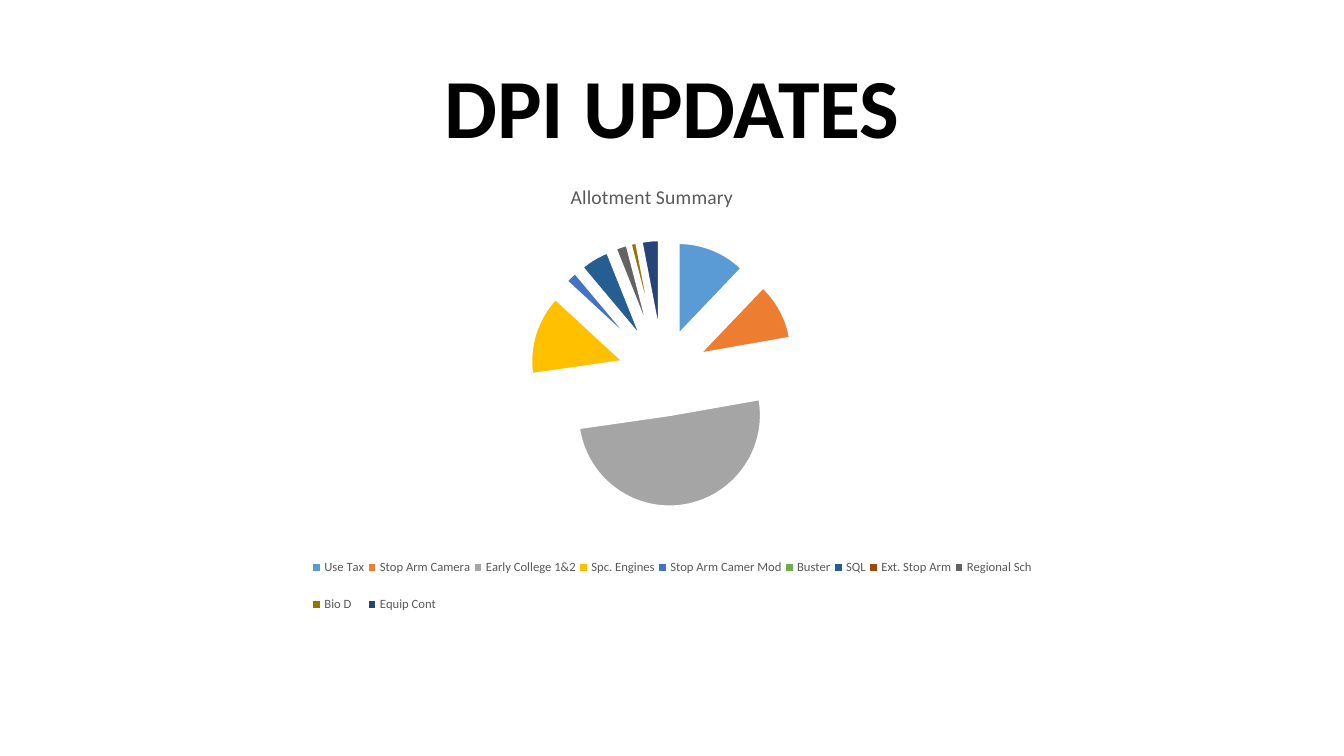
from dataclasses import dataclass

from pptx import Presentation
from pptx import util as u
from pptx.chart import data as chart_data
from pptx.dml import color
from pptx.enum import chart as ch
from pptx.enum import text
from pptx.oxml import ns, xmlchemy

EMU_PER_PX = 914400 / 100.8


@dataclass(frozen=True)
class Theme:
    font: str = "Calibri"
    ink: str = "000000"
    muted: str = "595959"
    paper: str = "FFFFFF"
    title_pt: int = 60
    chart_title_pt: int = 14
    chart_pt: int = 10
    legend_pt: int = 9
    border_pt: float = 1.5


@dataclass(frozen=True)
class Box:
    left: int
    top: int
    width: int
    height: int

    def emu(self) -> tuple[u.Emu, ...]:
        return tuple(px(v) for v in (self.left, self.top, self.width, self.height))


@dataclass(frozen=True)
class Allotment:
    name: str
    value: int
    fill: str


THEME = Theme()
TITLE_BOX = Box(168, 25, 1008, 137)
CHART_BOX = Box(194, 149, 957, 607)
EXPLOSION = 46
ALLOTMENTS = [
    Allotment("Use Tax", 12, "5B9BD5"),
    Allotment("Stop Arm Camera", 10, "ED7D31"),
    Allotment("Early College 1&2", 50, "A5A5A5"),
    Allotment("Spc. Engines", 14, "FFC000"),
    Allotment("Stop Arm Camer Mod", 2, "4472C4"),
    Allotment("Buster", 0, "70AD47"),
    Allotment("SQL", 5, "255E91"),
    Allotment("Ext. Stop Arm", 0, "9E480E"),
    Allotment("Regional Sch", 2, "636363"),
    Allotment("Bio D", 1, "997300"),
    Allotment("Equip Cont", 3, "264478"),
]


def px(value: int) -> u.Emu:
    return u.Emu(round(value * EMU_PER_PX))


def rgb(value: str) -> color.RGBColor:
    return color.RGBColor.from_string(value)


def style_font(font, size: float, fill: str, bold: bool = False) -> None:
    font.name = THEME.font
    font.size = u.Pt(size)
    font.bold = bold
    font.color.rgb = rgb(fill)


def chart_element(tag: str, value: object = None) -> xmlchemy.OxmlElement:
    element = xmlchemy.OxmlElement(tag)
    if value is not None:
        element.set("val", str(value))
    return element


def place(parent, index: int, **fractions: float) -> None:
    layout = parent.find(ns.qn("c:layout"))
    if layout is not None:
        parent.remove(layout)
    layout = chart_element("c:layout")
    manual = chart_element("c:manualLayout")
    layout.append(manual)
    if parent.tag == ns.qn("c:plotArea"):
        manual.append(chart_element("c:layoutTarget", "inner"))
    for key in ("x", "y"):
        manual.append(chart_element(f"c:{key}Mode", "edge"))
    for key, value in fractions.items():
        manual.append(chart_element(f"c:{key}", value))
    parent.insert(index, layout)


def add_title(s) -> None:
    sp = s.shapes.title
    sp.left, sp.top, sp.width, sp.height = TITLE_BOX.emu()
    tf = sp.text_frame
    tf.text = "DPI UPDATES"
    tf.vertical_anchor = text.MSO_ANCHOR.BOTTOM
    p = tf.paragraphs[0]
    p.alignment = text.PP_ALIGN.CENTER
    p.line_spacing = 0.9
    style_font(p.runs[0].font, THEME.title_pt, THEME.ink, bold=True)


def add_allotment_chart(s) -> None:
    data = chart_data.CategoryChartData()
    data.categories = [a.name for a in ALLOTMENTS]
    data.add_series("Series 1", [a.value for a in ALLOTMENTS])
    chart = s.shapes.add_chart(ch.XL_CHART_TYPE.PIE, *CHART_BOX.emu(), data).chart
    style_font(chart.font, THEME.chart_pt, THEME.ink)

    title = chart.chart_title
    title.text_frame.text = "Allotment Summary"
    style_font(title.text_frame.paragraphs[0].runs[0].font,
               THEME.chart_title_pt, THEME.muted)
    place(title._element, 1, x=0.39, y=0.05)

    chart.has_legend = True
    chart.legend.position = ch.XL_LEGEND_POSITION.BOTTOM
    chart.legend.include_in_layout = False
    style_font(chart.legend.font, THEME.legend_pt, THEME.muted)
    place(chart.legend._element, 1, x=0.12, y=0.64, w=0.76, h=0.16)

    plot = chart.plots[0]
    plot.vary_by_categories = True
    place(plot._element.getparent(), 0, x=0.02, y=0.15, w=0.94, h=0.44)
    series = plot.series[0]
    series._element.find(ns.qn("c:tx")).addnext(
        chart_element("c:explosion", EXPLOSION))
    for i, allotment in enumerate(ALLOTMENTS):
        fmt = series.points[i].format
        fmt.fill.solid()
        fmt.fill.fore_color.rgb = rgb(allotment.fill)
        fmt.line.color.rgb = rgb(THEME.paper)
        fmt.line.width = u.Pt(THEME.border_pt)


def main() -> None:
    prs = Presentation()
    prs.slide_width, prs.slide_height = px(1344), px(756)
    s = prs.slides.add_slide(prs.slide_layouts[5])
    s.background.fill.solid()
    s.background.fill.fore_color.rgb = rgb(THEME.paper)
    add_title(s)
    add_allotment_chart(s)
    prs.save("out.pptx")


if __name__ == "__main__":
    main()
